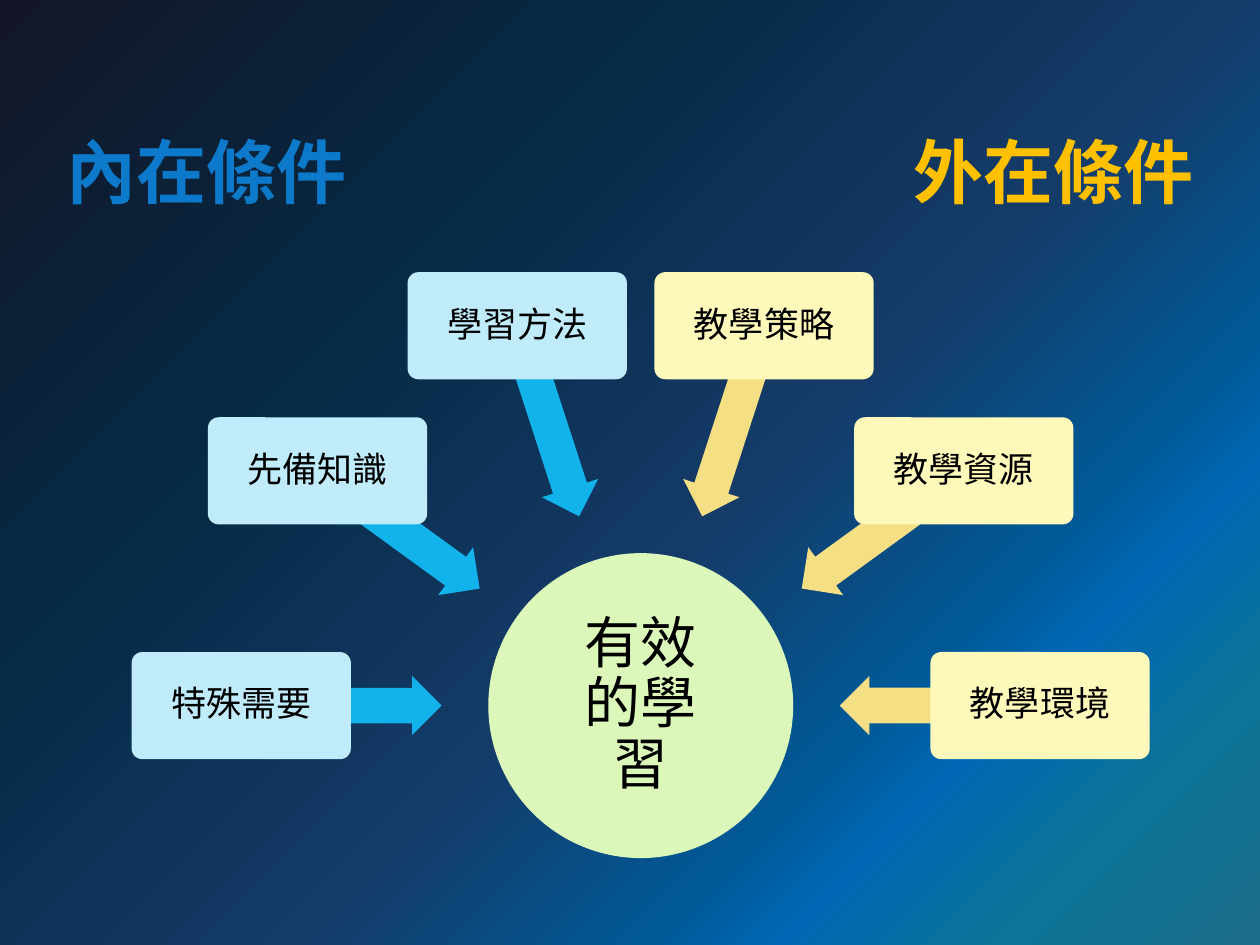
import math

import lxml.etree
import pptx
import pptx.dml.color
import pptx.enum.shapes
import pptx.enum.text
import pptx.oxml.ns
import pptx.util

Inches = pptx.util.Inches
SHAPES = pptx.enum.shapes.MSO_SHAPE

BACKGROUND_STOPS = [(0, "131627"), (32, "052B47"), (56, "153B69"), (72, "005996"),
                    (78, "0067B4"), (88, "0D7397"), (100, "1B6C89")]
INTERNAL = ["特殊需要", "先備知識", "學習方法"]
EXTERNAL = ["教學策略", "教學資源", "教學環境"]
CONDITIONS = ([(label, "BFEBFA", "12B2EB") for label in INTERNAL]
              + [(label, "FEF9BA", "F4DF84") for label in EXTERNAL])

HUB_RADIUS = 1.21
ARROW_ORBIT, ARROW_SIZE = 2.25, (1.34, 0.47)
CARD_ORBIT, CARD_SIZE = 3.17, (1.74, 0.85)


def rgb(color):
    return pptx.dml.color.RGBColor.from_string(color)


def paint_background(slide):
    slide.background.fill.gradient()
    gradient = slide.element.find(".//" + pptx.oxml.ns.qn("a:gradFill"))
    for child in list(gradient):
        gradient.remove(child)

    def add(parent, tag, **attributes):
        return lxml.etree.SubElement(parent, pptx.oxml.ns.qn(tag), attributes)

    stops = add(gradient, "a:gsLst")
    for position, color in BACKGROUND_STOPS:
        add(add(stops, "a:gs", pos=str(position * 1000)), "a:srgbClr", val=color)
    circle = add(gradient, "a:path", path="circle")
    add(circle, "a:fillToRect", r="100000", b="100000")


def format_text(frame, size, color, font, bold=False):
    for paragraph in frame.paragraphs:
        for run in paragraph.runs:
            run.font.size = pptx.util.Pt(size)
            run.font.name = font
            run.font.bold = bold
            run.font.color.rgb = rgb(color)


def add_centred(slide, kind, center, size, color):
    (x, y), (width, height) = center, size
    shape = slide.shapes.add_shape(kind, Inches(x - width / 2), Inches(y - height / 2),
                                   Inches(width), Inches(height))
    shape.shadow.inherit = False
    shape.fill.solid()
    shape.fill.fore_color.rgb = rgb(color)
    shape.line.fill.background()
    return shape


def write_label(shape, label, size, inset):
    frame = shape.text_frame
    frame.text = label
    frame.word_wrap = True
    frame.vertical_anchor = pptx.enum.text.MSO_ANCHOR.MIDDLE
    frame.margin_left = frame.margin_right = Inches(inset)
    frame.margin_top = frame.margin_bottom = Inches(inset)
    frame.paragraphs[0].alignment = pptx.enum.text.PP_ALIGN.CENTER
    frame.paragraphs[0].line_spacing = 0.9
    format_text(frame, size, "000000", "Lato")


def add_condition_diagram(slide, left, top, width, height):
    hub_center = (left + width / 2, top + height - HUB_RADIUS)
    hub = add_centred(slide, SHAPES.OVAL, hub_center, (2 * HUB_RADIUS, 2 * HUB_RADIUS), "DCF7BA")
    write_label(hub, "有效的學習", 32, 0.41)

    def on_orbit(radius, angle):
        return (hub_center[0] + radius * math.cos(math.radians(angle)),
                hub_center[1] + radius * math.sin(math.radians(angle)))

    step = 180 / (len(CONDITIONS) - 1)
    for index, (label, card_color, arrow_color) in enumerate(CONDITIONS):
        angle = 180 + index * step
        arrow = add_centred(slide, SHAPES.LEFT_ARROW, on_orbit(ARROW_ORBIT, angle),
                            ARROW_SIZE, arrow_color)
        arrow.adjustments[0] = 0.6
        arrow.adjustments[1] = 0.5
        arrow.rotation = angle % 360
        card = add_centred(slide, SHAPES.ROUNDED_RECTANGLE, on_orbit(CARD_ORBIT, angle),
                           CARD_SIZE, card_color)
        card.adjustments[0] = 0.1
        write_label(card, label, 20, 0.07)


def add_heading(slide, label, color, left, top, width, height):
    heading = slide.shapes.add_textbox(Inches(left), Inches(top), Inches(width), Inches(height))
    frame = heading.text_frame
    frame.text = label
    frame.word_wrap = False
    frame.auto_size = pptx.enum.text.MSO_AUTO_SIZE.SHAPE_TO_FIT_TEXT
    format_text(frame, 40, color, "Calibri", bold=True)


def main():
    presentation = pptx.Presentation()
    presentation.slide_width = Inches(10)
    presentation.slide_height = Inches(7.5)
    slide = presentation.slides.add_slide(presentation.slide_layouts.get_by_name("Blank"))
    paint_background(slide)
    add_condition_diagram(slide, 1.05, 2.17, 8.07, 4.64)
    add_heading(slide, "內在條件", "0D79CA", 0.43, 0.97, 2.45, 0.77)
    add_heading(slide, "外在條件", "FFC000", 7.15, 0.97, 2.45, 0.77)
    presentation.save("out.pptx")


if __name__ == "__main__":
    main()
